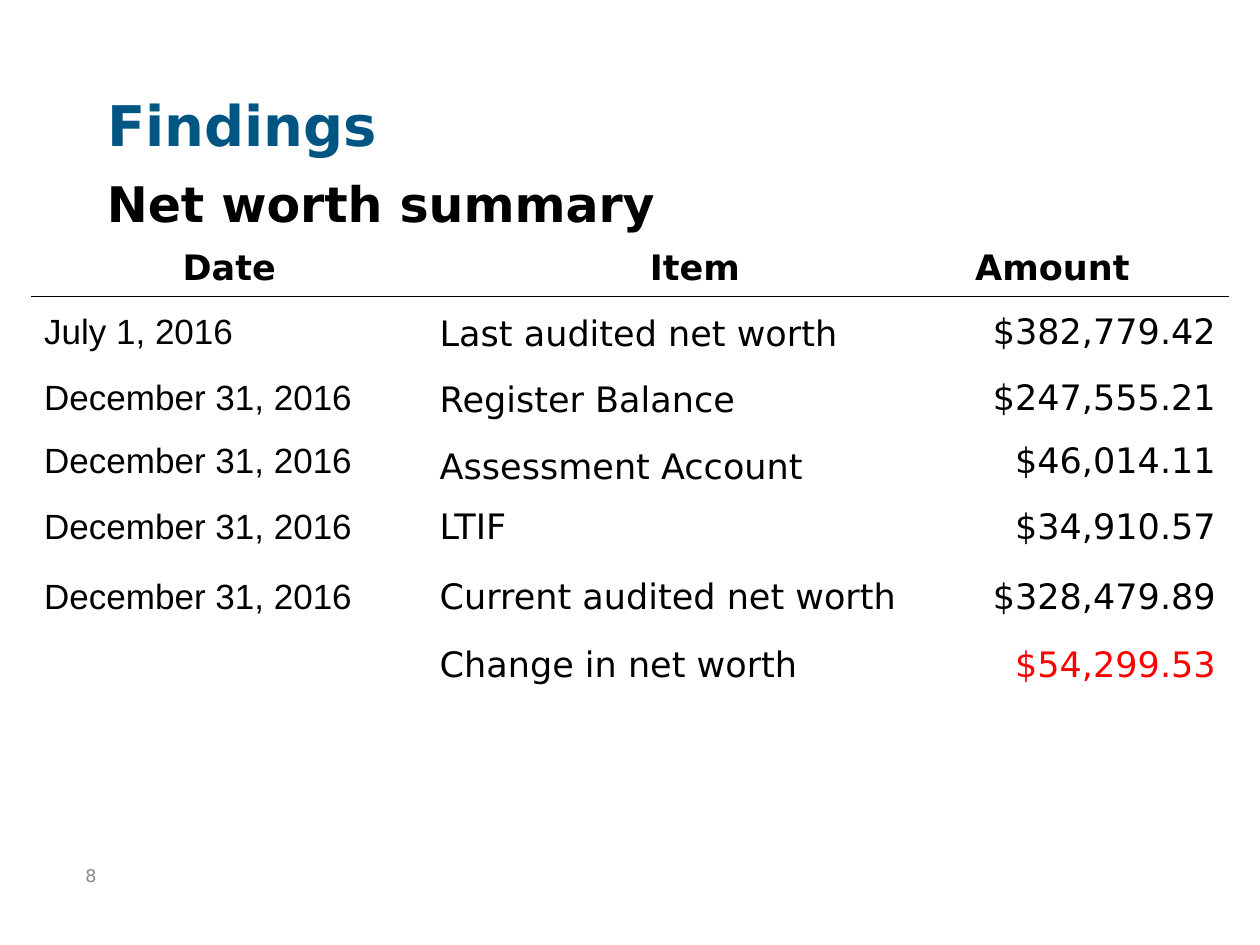
from typing import NamedTuple

from lxml import etree
from pptx import Presentation
from pptx.dml.color import RGBColor
from pptx.enum.text import MSO_ANCHOR, PP_ALIGN
from pptx.oxml.ns import qn
from pptx.util import Inches, Pt

TOP, MIDDLE = MSO_ANCHOR.TOP, MSO_ANCHOR.MIDDLE
LEFT, CENTER, RIGHT = PP_ALIGN.LEFT, PP_ALIGN.CENTER, PP_ALIGN.RIGHT

BLACK = RGBColor(0x00, 0x00, 0x00)
BLUE = RGBColor(0x00, 0x55, 0x82)
GRAY = RGBColor(0x89, 0x89, 0x89)
RED = RGBColor(0xFF, 0x00, 0x00)
SANS, ARIAL = "DejaVu Sans", "Arial"

COLS = (3.14, 4.25, 2.11)
HEAD = 0.43


class Style(NamedTuple):
    size: int = 20
    color: RGBColor = BLACK
    bold: bool = False
    font: str = SANS
    align: PP_ALIGN = LEFT
    space: float = 1.0


class Entry(NamedTuple):
    date: str
    item: str
    amount: str
    height: float
    space: float = 1.0
    color: RGBColor = BLACK


YEAR_END = "December 31, 2016"
ENTRIES = (
    Entry("July 1, 2016", "Last audited net worth", "$382,779.42", 0.57, 1.1),
    Entry(YEAR_END, "Register Balance", "$247,555.21", 0.47, 1.1),
    Entry(YEAR_END, "Assessment Account", "$46,014.11", 0.53, 1.3),
    Entry(YEAR_END, "LTIF", "$34,910.57", 0.52),
    Entry(YEAR_END, "Current audited net worth", "$328,479.89", 0.58),
    Entry("", "Change in net worth", "$54,299.53", 0.5, color=RED),
)


def write(frame, text: str, style: Style) -> None:
    frame.text = text
    para = frame.paragraphs[0]
    para.alignment = style.align
    para.line_spacing = style.space
    for run in para.runs:
        font = run.font
        font.name, font.size = style.font, Pt(style.size)
        font.bold, font.color.rgb = style.bold, style.color


def place(shape, box: tuple, text: str, style: Style, anchor=TOP) -> None:
    shape.left, shape.top, shape.width, shape.height = map(Inches, box)
    frame = shape.text_frame
    frame.word_wrap = True
    frame.vertical_anchor = anchor
    write(frame, text, style)


def rule(cell, side: str) -> None:
    """Draw a black one-point border on one side of a cell."""
    line = etree.Element(qn(f"a:{side}"), w=str(Pt(1)))
    fill = etree.SubElement(line, qn("a:solidFill"))
    etree.SubElement(fill, qn("a:srgbClr"), val=str(BLACK))
    cell._tc.get_or_add_tcPr().insert(0, line)


def fill_cell(cell, text: str, style: Style, anchor=MIDDLE) -> None:
    cell.fill.background()
    cell.vertical_anchor = anchor
    write(cell.text_frame, text, style)


def add_summary(slide) -> None:
    heights = [HEAD] + [entry.height for entry in ENTRIES]
    table = slide.shapes.add_table(
        len(heights), len(COLS), Inches(0.25), Inches(1.92),
        Inches(sum(COLS)), Inches(sum(heights))).table
    table.first_row = table.horz_banding = False
    for col, width in zip(table.columns, COLS):
        col.width = Inches(width)
    for row, height in zip(table.rows, heights):
        row.height = Inches(height)

    heads = (("Date", CENTER), ("Item", CENTER), ("Amount", LEFT))
    for c, (text, align) in enumerate(heads):
        fill_cell(table.cell(0, c), text, Style(bold=True, align=align), TOP)
        rule(table.cell(0, c), "lnB")
        rule(table.cell(1, c), "lnT")

    for r, entry in enumerate(ENTRIES, 1):
        fill_cell(table.cell(r, 0), entry.date, Style(font=ARIAL))
        fill_cell(table.cell(r, 1), entry.item, Style(space=entry.space))
        fill_cell(table.cell(r, 2), entry.amount,
                  Style(color=entry.color, align=RIGHT))


def add_text(slide, box: tuple, text: str, style: Style, anchor=TOP) -> None:
    shape = slide.shapes.add_textbox(*map(Inches, box))
    place(shape, box, text, style, anchor)


def main() -> None:
    deck = Presentation()
    deck.slide_width, deck.slide_height = Inches(10), Inches(7.5)
    slide = deck.slides.add_slide(deck.slide_layouts[5])
    place(slide.shapes.title, (0.75, 0.67, 8.5, 1.25), "Findings",
          Style(32, BLUE, True))
    add_text(slide, (0.75, 1.33, 8.5, 0.58), "Net worth summary",
             Style(28, bold=True))
    add_text(slide, (0.58, 6.75, 0.75, 0.4), "8", Style(10, GRAY), MIDDLE)
    add_summary(slide)
    deck.save("out.pptx")


if __name__ == "__main__":
    main()
